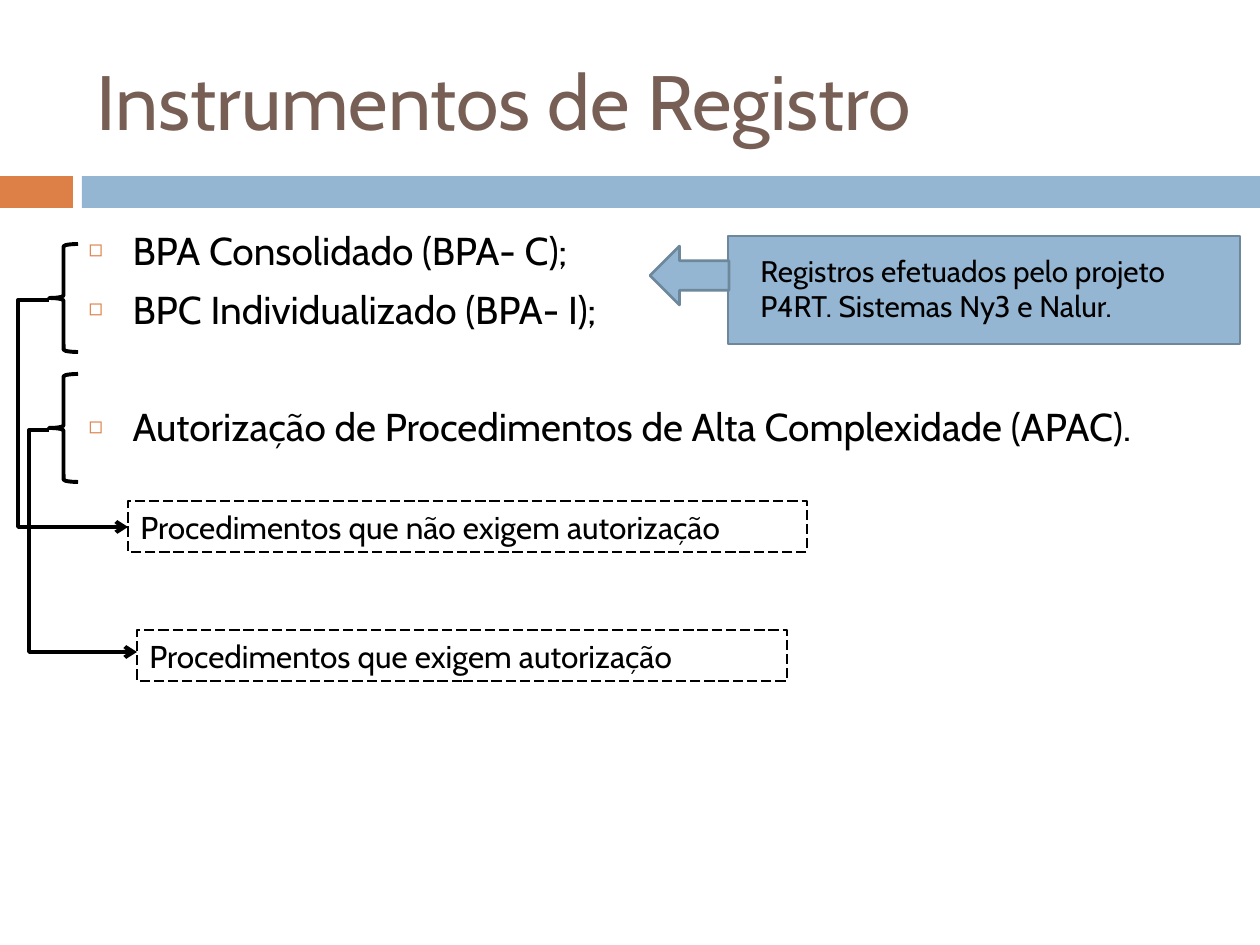
"""Build the "Instrumentos de Registro" slide."""
from dataclasses import dataclass
from typing import Any, Optional

from lxml.etree import SubElement
from pptx import Presentation
from pptx.dml.color import RGBColor
from pptx.enum.dml import MSO_LINE_DASH_STYLE as Dash
from pptx.enum.shapes import MSO_CONNECTOR as Connector, MSO_SHAPE as Preset
from pptx.enum.text import MSO_ANCHOR as Anchor, MSO_AUTO_SIZE as AutoSize, PP_ALIGN as Align
from pptx.oxml.ns import qn
from pptx.util import Pt

EMU_PER_PX = 914400 / 126
FONT = "Cabin"
COLORS = {
    "orange": "DD8047",
    "blue": "94B6D2",
    "blue_edge": "6D879B",
    "brown": "775F55",
    "black": "000000",
}


@dataclass(frozen=True)
class Frame:
    left: int
    top: int
    width: int
    height: int

    def emu(self) -> tuple[int, ...]:
        return tuple(px(n) for n in (self.left, self.top, self.width, self.height))


@dataclass(frozen=True)
class Block:
    preset: Any
    frame: Frame
    fill: Optional[str] = None
    line: Optional[str] = None
    weight: float = 0
    dash: Any = None
    text: str = ""
    size: float = 18


@dataclass(frozen=True)
class Route:
    start: tuple[int, int]
    end: tuple[int, int]
    bend: int


@dataclass(frozen=True)
class Item:
    text: str
    before: float = 7


BANDS = [
    Block(Preset.RECTANGLE, Frame(0, 176, 73, 32), "orange"),
    Block(Preset.RECTANGLE, Frame(82, 176, 1178, 32), "blue"),
]
BRACES = [
    Block(Preset.LEFT_BRACE, Frame(49, top, 29, 108), line="black", weight=2.25)
    for top in (244, 374)
]
CAPTIONS = [
    Block(Preset.RECTANGLE, frame, None, "black", 0.75, Dash.LONG_DASH, text)
    for frame, text in (
        (Frame(128, 501, 679, 51), "Procedimentos que não exigem autorização"),
        (Frame(137, 630, 650, 51), "Procedimentos que exigem autorização"),
    )
]
CALLOUT = [
    Block(Preset.RECTANGLE, Frame(728, 236, 512, 108), "blue", "blue_edge", 1.5),
    Block(Preset.RECTANGLE, Frame(748, 246, 483, 84), size=17,
          text="Registros efetuados pelo projeto P4RT. Sistemas Ny3 e Nalur."),
    Block(Preset.LEFT_ARROW, Frame(650, 246, 79, 59), "blue", "blue_edge", 1.5),
]
ROUTES = [
    Route((49, 300), (128, 527), 18),
    Route((49, 430), (137, 652), 29),
]
ITEMS = [
    Item("BPA Consolidado (BPA- C);"),
    Item("BPC Individualizado (BPA- I);"),
    Item("Autorização de Procedimentos de Alta Complexidade (APAC).", 40.7),
]


def px(length: float) -> int:
    return round(length * EMU_PER_PX)


def rgb(name: str) -> RGBColor:
    return RGBColor.from_string(COLORS[name])


def assign(target: Any, values: dict[str, Any]) -> None:
    for name, value in values.items():
        setattr(target, name, value)


def write(para: Any, text: str, size: float, color: str = "black") -> None:
    span = para.add_run()
    span.text = text
    assign(span.font, {"name": FONT, "size": Pt(size)})
    span.font.color.rgb = rgb(color)


def place(box: Any, frame: Frame, anchor: Any) -> None:
    assign(box, dict(zip(("left", "top", "width", "height"), frame.emu())))
    assign(box.text_frame, {"word_wrap": True, "auto_size": AutoSize.NONE,
                            "vertical_anchor": anchor})


def draw_block(page: Any, block: Block) -> None:
    shape = page.shapes.add_shape(block.preset, *block.frame.emu())
    shape.shadow.inherit = False
    if block.fill:
        shape.fill.solid()
        shape.fill.fore_color.rgb = rgb(block.fill)
    else:
        shape.fill.background()
    if block.line:
        shape.line.color.rgb = rgb(block.line)
        assign(shape.line, {"width": Pt(block.weight), "dash_style": block.dash})
    else:
        shape.line.fill.background()
    if block.text:
        assign(shape.text_frame, {"word_wrap": True, "vertical_anchor": Anchor.MIDDLE})
        para = shape.text_frame.paragraphs[0]
        para.alignment = Align.LEFT
        write(para, block.text, block.size)


def draw_route(page: Any, route: Route) -> None:
    ends = [px(n) for n in (*route.start, *route.end)]
    link = page.shapes.add_connector(Connector.ELBOW, *ends)
    link.line.color.rgb = rgb("black")
    link.line.width = Pt(2.25)
    properties = link.element.spPr
    SubElement(properties.find(qn("a:ln")), qn("a:tailEnd"), type="arrow")
    SubElement(properties, qn("a:effectLst"))
    ratio = (route.bend - route.start[0]) / (route.end[0] - route.start[0])
    guides = properties.find(qn("a:prstGeom")).find(qn("a:avLst"))
    SubElement(guides, qn("a:gd"), name="adj1", fmla=f"val {round(ratio * 100000)}")


def add_bullet(para: Any) -> None:
    properties = para._p.get_or_add_pPr()
    assign_indent = {"marL": px(44), "indent": px(-44)}
    for name, value in assign_indent.items():
        properties.set(name, str(value))
    color = SubElement(properties, qn("a:buClr"))
    SubElement(color, qn("a:srgbClr"), val=COLORS["orange"])
    SubElement(properties, qn("a:buSzPct"), val="60000")
    SubElement(properties, qn("a:buChar"), char="◻")


def fill_title(box: Any) -> None:
    place(box, Frame(84, 32, 1124, 136), Anchor.MIDDLE)
    para = box.text_frame.paragraphs[0]
    para.alignment = Align.LEFT
    write(para, "Instrumentos de Registro", 44, "brown")


def fill_list(box: Any) -> None:
    place(box, Frame(76, 220, 1152, 272), Anchor.TOP)
    for index, item in enumerate(ITEMS):
        para = box.text_frame.add_paragraph() if index else box.text_frame.paragraphs[0]
        para.space_before = Pt(item.before)
        add_bullet(para)
        write(para, item.text, 22.2)


def main() -> None:
    deck = Presentation()
    assign(deck, {"slide_width": px(1260), "slide_height": px(945)})
    page = deck.slides.add_slide(deck.slide_layouts[1])
    fill_title(page.shapes.title)
    fill_list(page.placeholders[1])
    for block in BANDS + BRACES + CAPTIONS + CALLOUT:
        draw_block(page, block)
    for route in ROUTES:
        draw_route(page, route)
    deck.save("out.pptx")


if __name__ == "__main__":
    main()
